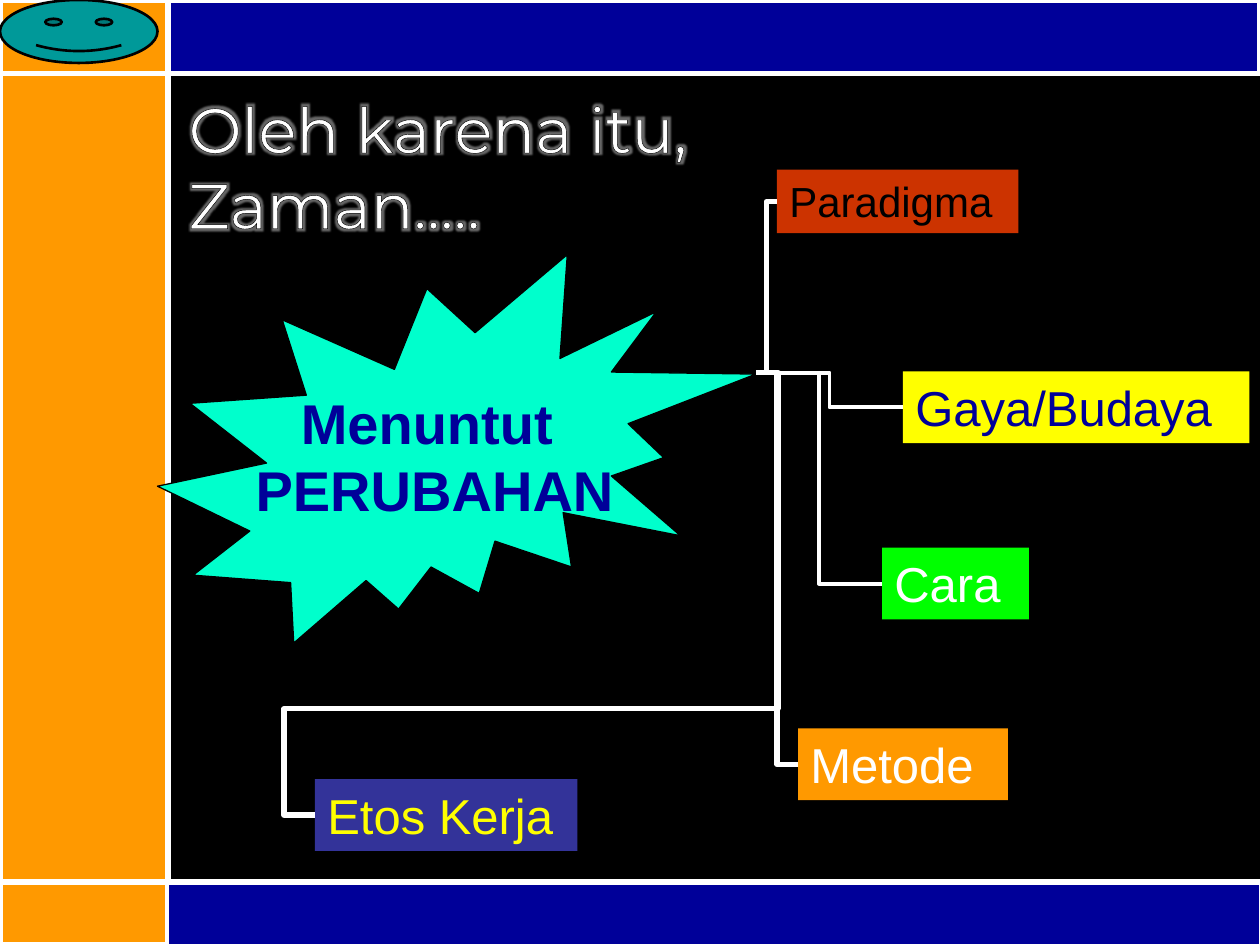
"""Build the slide on what the times demand: a starburst linked to five labelled boxes."""
from lxml import etree
from pptx import Presentation
from pptx.dml import color
from pptx.enum import shapes, text
from pptx.oxml import ns
from pptx.util import Pt

COLORS = {
    "black": "000000", "white": "FFFFFF", "navy": "000099", "orange": "FF9900",
    "teal": "009999", "aqua": "00FFCC", "red": "CC3300", "yellow": "FFFF00",
    "green": "00FF00", "indigo": "333399",
}
WIDTH, HEIGHT = 720, 540
SIDEBAR, TOP_BAR, BOTTOM_BAR = 96, 42, 504
TITLE = ["Oleh karena itu,", "Zaman....."]
DEMAND = ["Menuntut ", "PERUBAHAN"]
BURST = (90, 145.5, 342, 222)
HUB = (432, 213)
GLOW = '<a:effectLst xmlns:a="%s"><a:glow rad="63500"><a:srgbClr val="%s"><a:alpha val="40000"/></a:srgbClr></a:glow></a:effectLst>'

# label, box, fill, font colour, font size, line width, elbow bends
BOXES = [
    ("Paradigma", (444, 97, 138, 36.35), "red", "black", 24, 3, [0.5]),
    ("Gaya/Budaya", (516, 212.25, 198, 41), "yellow", "navy", 28, 2.25, [0.5]),
    ("Cara", (504, 313, 84, 41), "green", "white", 28, 2.25, [0.5]),
    ("Metode", (456, 416.25, 120, 41), "orange", "white", 28, 3, [0.5]),
    ("Etos Kerja", (180, 445.25, 150, 41), "indigo", "yellow", 28, 3, [-0.07, 0.24, 1.05]),
]


def rgb(name):
    return color.RGBColor.from_string(COLORS[name])


def set_line(line, name, width):
    line.color.rgb = rgb(name)
    line.width = Pt(width)


def add_block(slide, kind, box, fill, line=None, width=0.75):
    shape = slide.shapes.add_shape(kind, *map(Pt, box))
    shape.shadow.inherit = False
    shape.fill.solid()
    shape.fill.fore_color.rgb = rgb(fill)
    if line:
        set_line(shape.line, line, width)
    else:
        shape.line.fill.background()
    return shape


def write(shape, lines, *, size, ink, font="Arial", bold=False, align="LEFT",
          anchor="TOP", wrap=True, glow=None):
    frame = shape.text_frame
    frame.word_wrap = wrap
    frame.vertical_anchor = getattr(text.MSO_ANCHOR, anchor)
    for index, line in enumerate(lines):
        paragraph = frame.add_paragraph() if index else frame.paragraphs[0]
        paragraph.alignment = getattr(text.PP_ALIGN, align)
        run = paragraph.add_run()
        run.text = line
        run.font.name, run.font.size, run.font.bold = font, Pt(size), bold
        run.font.color.rgb = rgb(ink)
        if glow:
            properties = run.font._element if hasattr(run.font, "_element") else run._r.get_or_add_rPr()
            outline = etree.Element(ns.qn("a:ln"), w=str(Pt(0.75)))
            fill = etree.SubElement(outline, ns.qn("a:solidFill"))
            etree.SubElement(fill, ns.qn("a:srgbClr"), val=COLORS["black"])
            properties.insert(0, outline)
            effect = etree.fromstring(GLOW % (ns.nsdecls("a").split('"')[1], COLORS[glow]))
            properties.insert(2, effect)


def connect(slide, kind, start, end, width, bends=()):
    connector = slide.shapes.add_connector(kind, *map(Pt, (*start, *end)))
    set_line(connector.line, "white", width)
    properties = connector._element.spPr
    etree.SubElement(properties, ns.qn("a:effectLst"))
    if bends:
        geometry = properties.find(ns.qn("a:prstGeom"))
        geometry.set("prst", f"bentConnector{len(bends) + 2}")
        guides = geometry.find(ns.qn("a:avLst"))
        if guides is None:
            guides = etree.SubElement(geometry, ns.qn("a:avLst"))
        for number, bend in enumerate(bends, 1):
            etree.SubElement(guides, ns.qn("a:gd"), name=f"adj{number}",
                             fmla=f"val {round(bend * 100000)}")


def main():
    presentation = Presentation()
    presentation.slide_width, presentation.slide_height = Pt(WIDTH), Pt(HEIGHT)
    slide = presentation.slides.add_slide(presentation.slide_layouts[6])
    slide.background.fill.solid()
    slide.background.fill.fore_color.rgb = rgb("black")
    kinds, links = shapes.MSO_SHAPE, shapes.MSO_CONNECTOR

    add_block(slide, kinds.FLOWCHART_PROCESS, (0, 0, SIDEBAR, HEIGHT), "orange", "white", 3)
    content = WIDTH - SIDEBAR
    add_block(slide, kinds.RECTANGLE, (SIDEBAR, 0, content, TOP_BAR), "navy", "white", 3)
    add_block(slide, kinds.RECTANGLE, (SIDEBAR, BOTTOM_BAR, content, HEIGHT - BOTTOM_BAR),
              "navy", "white")
    for y in (TOP_BAR, BOTTOM_BAR):
        connect(slide, links.STRAIGHT, (WIDTH, y), (0, y), 3)
    add_block(slide, kinds.SMILEY_FACE, (0, 0, 90, 36), "teal", "black", 1.5)

    title = slide.shapes.add_textbox(*map(Pt, (100.75, 48, 313, 78)))
    write(title, TITLE, size=36, ink="white", font="Montserrat", wrap=False, glow="white")
    burst = add_block(slide, kinds.EXPLOSION2, BURST, "aqua", "black")
    write(burst, DEMAND, size=32, ink="navy", bold=True, align="CENTER",
          anchor="MIDDLE", wrap=False)

    for label, box, fill, ink, size, width, bends in BOXES:
        left, top, _, height = box
        write(add_block(slide, kinds.RECTANGLE, box, fill), [label], size=size, ink=ink)
        connect(slide, links.ELBOW, (left, top + height / 2), HUB, width, bends)

    presentation.save("out.pptx")


if __name__ == "__main__":
    main()
